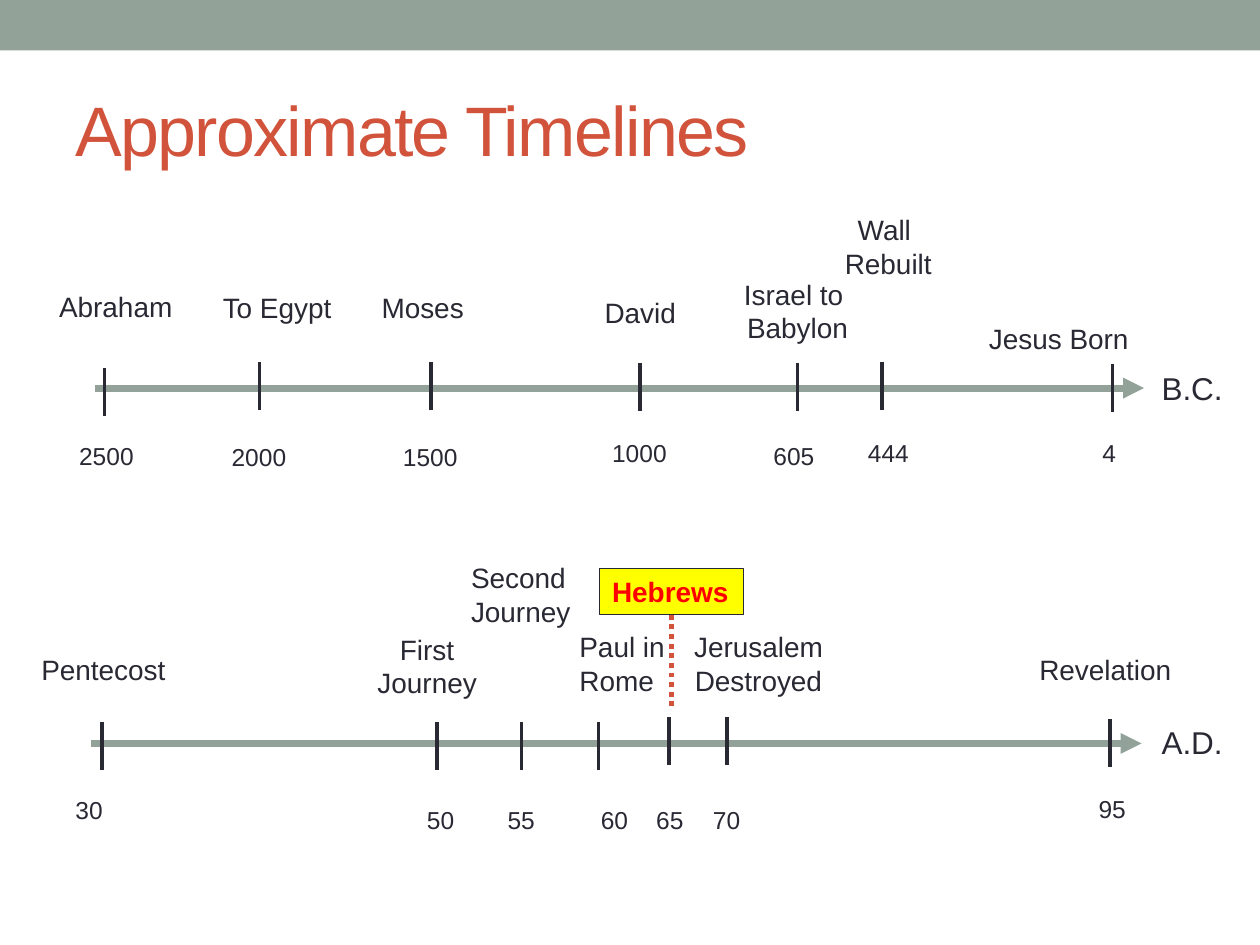
from lxml.etree import SubElement
from pptx import Presentation
from pptx.dml.color import RGBColor
from pptx.enum.dml import MSO_LINE
from pptx.enum.shapes import MSO_CONNECTOR, MSO_SHAPE
from pptx.enum.text import MSO_ANCHOR, MSO_AUTO_SIZE, PP_ALIGN as AL
from pptx.oxml.ns import qn
from pptx.util import Inches, Pt

SAGE = RGBColor(0x93, 0xA2, 0x99)
RUST = RGBColor(0xD2, 0x53, 0x3C)
INK = RGBColor(0x29, 0x29, 0x34)
YELLOW = RGBColor(0xFF, 0xFF, 0x00)
RED = RGBColor(0xFF, 0x00, 0x00)
FONT = "Arial"
TICK = 0.38
LINE_H = {14: 0.34, 16: 0.37, 18: 0.4}  # box height of one line, by font size
EXTRA_LINE = 0.27

# Event: (label, left, top, width, alignment), (tick x, tick top), (year, left, top)
TIMELINES = [
    {"era": "B.C.", "era_top": 2.88, "axis": (0.75, 9.08, 3.08), "events": [
        (("Abraham", 0.37, 2.25, 1.11, AL.LEFT), (0.83, 2.92), ("2500", 0.53, 3.45)),
        (("To Egypt", 1.67, 2.26, 1.07, AL.LEFT), (2.06, 2.87), ("2000", 1.74, 3.46)),
        (("Moses", 2.93, 2.26, 0.86, AL.LEFT), (3.42, 2.87), ("1500", 3.1, 3.46)),
        (("David", 4.7, 2.3, 0.77, AL.LEFT), (5.08, 2.88), ("1000", 4.76, 3.43)),
        (("Israel to \nBabylon", 5.8, 2.15, 1.06, AL.CENTER), (6.33, 2.88), ("605", 6.04, 3.45)),
        (("Wall \nRebuilt", 6.6, 1.64, 0.9, AL.CENTER), (7, 2.87), ("444", 6.79, 3.43)),
        (("Jesus Born", 7.75, 2.5, 1.32, AL.LEFT), (8.83, 2.89), ("4", 8.65, 3.43)),
    ]},
    {"era": "A.D.", "era_top": 5.69, "axis": (0.72, 9.06, 5.9), "events": [
        (("Pentecost", 0.23, 5.13, 1.2, AL.LEFT), (0.81, 5.73), ("30", 0.5, 6.26)),
        (("First\nJourney", 2.89, 4.97, 1, AL.CENTER), (3.47, 5.73), ("50", 3.29, 6.34)),
        (("Second\nJourney", 3.64, 4.4, 1, AL.LEFT), (4.14, 5.73), ("55", 3.93, 6.34)),
        (("Paul in\nRome", 4.5, 4.95, 0.89, AL.LEFT), (4.75, 5.73), ("60", 4.67, 6.34)),
        (None, (5.31, 5.69), ("65", 5.11, 6.34)),  # marked by the Hebrews box
        (("Jerusalem\nDestroyed", 5.4, 4.95, 1.24, AL.CENTER), (5.77, 5.69), ("70", 5.56, 6.34)),
        (("Revelation", 8.15, 5.13, 1.26, AL.LEFT), (8.81, 5.71), ("95", 8.62, 6.25)),
    ]},
]
HEBREWS = ("Hebrews", 4.76, 4.51, 1.14, 0.37)

prs = Presentation()
prs.slide_width, prs.slide_height = Inches(10), Inches(7.5)
slide = prs.slides.add_slide(prs.slide_layouts[5])
shapes = slide.shapes


def box(*inches):
    return [Inches(v) for v in inches]


def write(sp, text, size, color=INK, align=AL.LEFT, bold=False):
    tf = sp.text_frame
    tf.text = text
    tf.word_wrap = False
    for p in tf.paragraphs:
        p.alignment = align
        p.font.name, p.font.size, p.font.bold = FONT, Pt(size), bold
        p.font.color.rgb = color
    return tf


def label(text, left, top, width, align=AL.LEFT, size=16):
    height = LINE_H[size] + EXTRA_LINE * text.count("\n")
    sp = shapes.add_textbox(*box(left, top, width, height))
    write(sp, text, size, align=align).auto_size = MSO_AUTO_SIZE.SHAPE_TO_FIT_TEXT


def line(x1, y1, x2, y2, color, width):
    c = shapes.add_connector(MSO_CONNECTOR.STRAIGHT, *box(x1, y1, x2, y2))
    c.line.color.rgb, c.line.width = color, Pt(width)
    SubElement(c._element.spPr, qn("a:effectLst"))
    return c


def rect(fill, *inches):
    sp = shapes.add_shape(MSO_SHAPE.RECTANGLE, *box(*inches))
    sp.shadow.inherit = False
    sp.fill.solid()
    sp.fill.fore_color.rgb = fill
    sp.line.fill.background()
    return sp


# Top band and title
rect(SAGE, 0, 0, 10, 0.4)
title = shapes.title
title.left, title.top, title.width, title.height = box(0.5, 0.58, 9, 0.88)
tf = write(title, "Approximate Timelines", 40, RUST)
tf.word_wrap, tf.auto_size = True, MSO_AUTO_SIZE.NONE
tf.vertical_anchor = MSO_ANCHOR.MIDDLE
tf.paragraphs[0].runs[0].font._element.set("spc", "-100")

# Timelines: axis, then each event's label, tick and year
for timeline in TIMELINES:
    start, end, y = timeline["axis"]
    axis = line(start, y, end, y, SAGE, 4)
    SubElement(axis.line._get_or_add_ln(), qn("a:tailEnd"), type="triangle")
    for event, (x, top), (year, left, year_top) in timeline["events"]:
        if event:
            label(*event)
        line(x, top, x, top + TICK, INK, 2)
        label(year, left, year_top, 0.2 + 0.11 * len(year), size=14)
    label(timeline["era"], 9.12, timeline["era_top"], 0.69, size=18)

# Hebrews callout with its dotted pointer
name, left, top, width, height = HEBREWS
callout = rect(YELLOW, left, top, width, height)
callout.line.color.rgb, callout.line.width = INK, Pt(0.75)
write(callout, name, 16, RED, bold=True)
x, bottom = left + width / 2, top + height
pointer = line(x, bottom, x, bottom + 0.73, RUST, 2.75)
pointer.line.dash_style = MSO_LINE.ROUND_DOT

prs.save("out.pptx")
